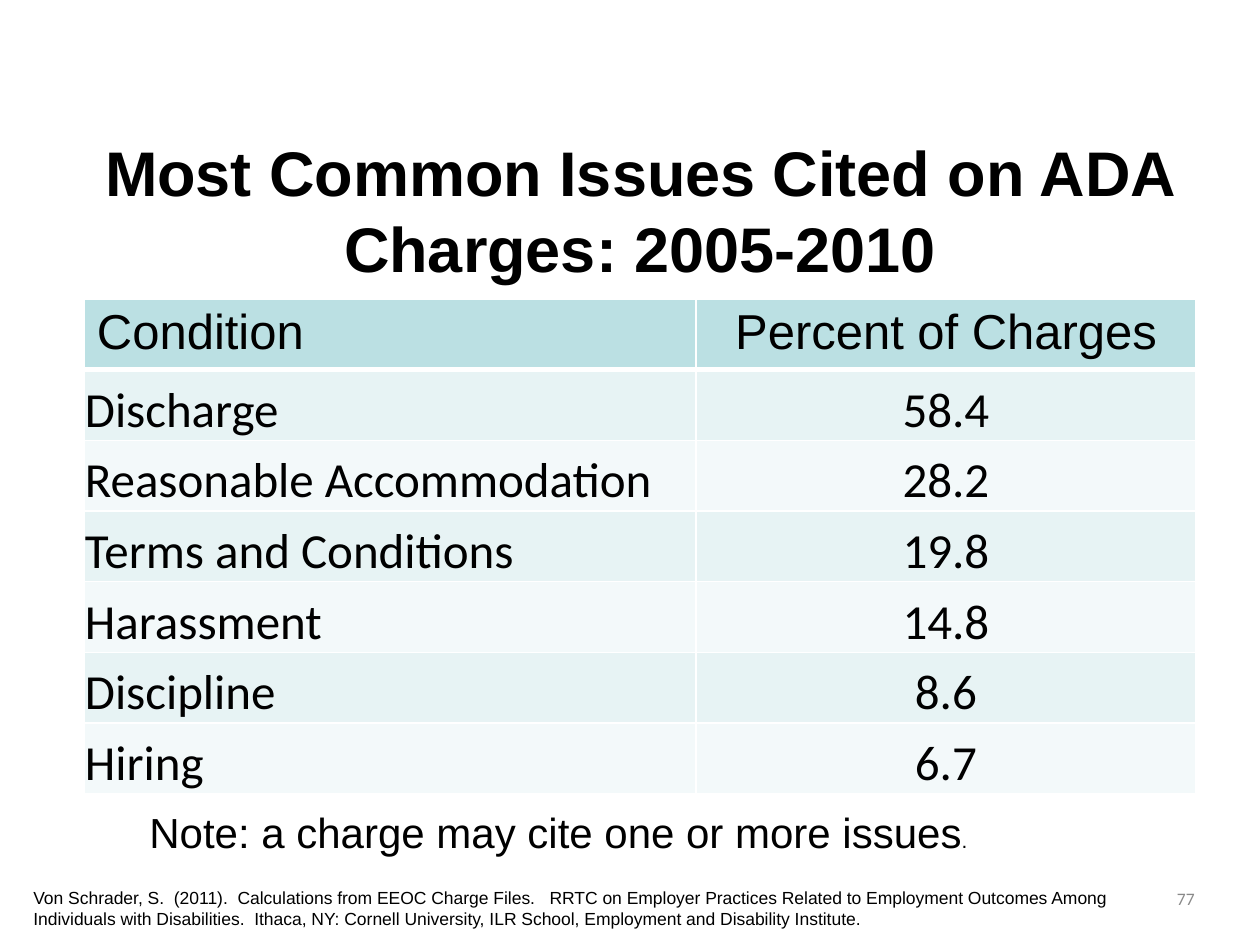
"""Build a slide with a table of the most common issues cited on ADA charges."""
from lxml.etree import SubElement
from pptx import Presentation
from pptx.dml.color import RGBColor
from pptx.enum.text import MSO_ANCHOR, MSO_AUTO_SIZE, PP_ALIGN
from pptx.oxml.ns import qn
from pptx.util import Pt

TITLE = "Most Common Issues Cited on ADA Charges: 2005-2010"
HEADER = ("Condition", "Percent of Charges")
ISSUES = [
    ("Discharge", "58.4"),
    ("Reasonable Accommodation", "28.2"),
    ("Terms and Conditions", "19.8"),
    ("Harassment", "14.8"),
    ("Discipline", "8.6"),
    ("Hiring", "6.7"),
]
NOTE = [("Note: a charge may cite one or more issues", 24), (".", 11.8)]
CITATION = (
    "Von Schrader, S.  (2011).  Calculations from EEOC Charge Files.   "
    "RRTC on Employer Practices Related to Employment Outcomes Among "
    "Individuals with Disabilities.  Ithaca, NY: Cornell University, "
    "ILR School, Employment and Disability Institute."
)
PAGE_NUMBER = "77"

COLORS = {
    "text": "000000",
    "number": "898989",
    "header": "BBE0E3",
    "odd": "E7F3F4",
    "even": "F3F9FA",
    "border": "FFFFFF",
}
COLUMN_WIDTHS = (612, 500)
COLUMN_ALIGNS = (PP_ALIGN.LEFT, PP_ALIGN.CENTER)
TABLE_HEIGHT = 495
HEADER_INSETS = (13, 6, 13, 6)
BODY_INSETS = (1, 1, 1, 0)


def px(length):
    return round(length * 914400 / 126)


def place(shape, left, top, width, height):
    shape.left, shape.top = px(left), px(top)
    shape.width, shape.height = px(width), px(height)


def write(frame, spans, font="Arial", color="text", align=PP_ALIGN.LEFT, bold=False):
    para = frame.paragraphs[0]
    para.alignment = align
    for text, size in spans:
        span = para.add_run()
        span.text = text
        span.font.name = font
        span.font.size = Pt(size)
        span.font.bold = bold
        span.font.color.rgb = RGBColor.from_string(COLORS[color])


def add_text(page, area, spans, **style):
    box = page.shapes.add_textbox(0, 0, 0, 0)
    place(box, *area)
    box.text_frame.word_wrap = True
    write(box.text_frame, spans, **style)


def set_borders(cell, bottom=1, top=1):
    properties = cell._tc.get_or_add_tcPr()
    widths = {"lnL": 1, "lnR": 1, "lnT": top, "lnB": bottom}
    for position, (side, width) in enumerate(widths.items()):
        line = SubElement(properties, qn(f"a:{side}"), w=str(Pt(width)))
        fill = SubElement(line, qn("a:solidFill"))
        SubElement(fill, qn("a:srgbClr"), val=COLORS["border"])
        properties.insert(position, line)


def add_issue_table(page):
    rows = [HEADER] + ISSUES
    frame = page.shapes.add_table(
        len(rows), len(HEADER), px(84), px(299), px(sum(COLUMN_WIDTHS)), px(TABLE_HEIGHT)
    )
    table = frame.table
    for column, width in zip(table.columns, COLUMN_WIDTHS):
        column.width = px(width)
    for index, values in enumerate(rows):
        table.rows[index].height = px(TABLE_HEIGHT / len(rows))
        is_header = index == 0
        shade = "header" if is_header else ("even", "odd")[index % 2]
        insets = HEADER_INSETS if is_header else BODY_INSETS
        for position, text in enumerate(values):
            cell = table.cell(index, position)
            cell.fill.solid()
            cell.fill.fore_color.rgb = RGBColor.from_string(COLORS[shade])
            cell.vertical_anchor = MSO_ANCHOR.TOP if is_header else MSO_ANCHOR.BOTTOM
            cell.margin_left, cell.margin_top, cell.margin_right, cell.margin_bottom = map(px, insets)
            set_borders(cell, bottom=3 if is_header else 1, top=3 if index == 1 else 1)
            write(
                cell.text_frame,
                [(text, 28)],
                font="Arial" if is_header else "Calibri",
                align=COLUMN_ALIGNS[position],
            )


def main():
    deck = Presentation()
    deck.slide_width, deck.slide_height = px(1260), px(945)
    page = deck.slides.add_slide(deck.slide_layouts[5])

    title = page.shapes.title
    place(title, 73, 136, 1134, 147)
    title.text_frame.auto_size = MSO_AUTO_SIZE.NONE
    title.text_frame.vertical_anchor = MSO_ANCHOR.MIDDLE
    write(title.text_frame, [(TITLE, 36)], align=PP_ALIGN.CENTER, bold=True)

    add_issue_table(page)
    add_text(page, (137, 800, 1123, 50), NOTE)
    add_text(page, (21, 881, 1099, 55), [(CITATION, 10)])
    add_text(
        page, (945, 882, 262, 63), [(PAGE_NUMBER, 10)],
        font="Calibri", color="number", align=PP_ALIGN.RIGHT,
    )
    deck.save("out.pptx")


if __name__ == "__main__":
    main()
